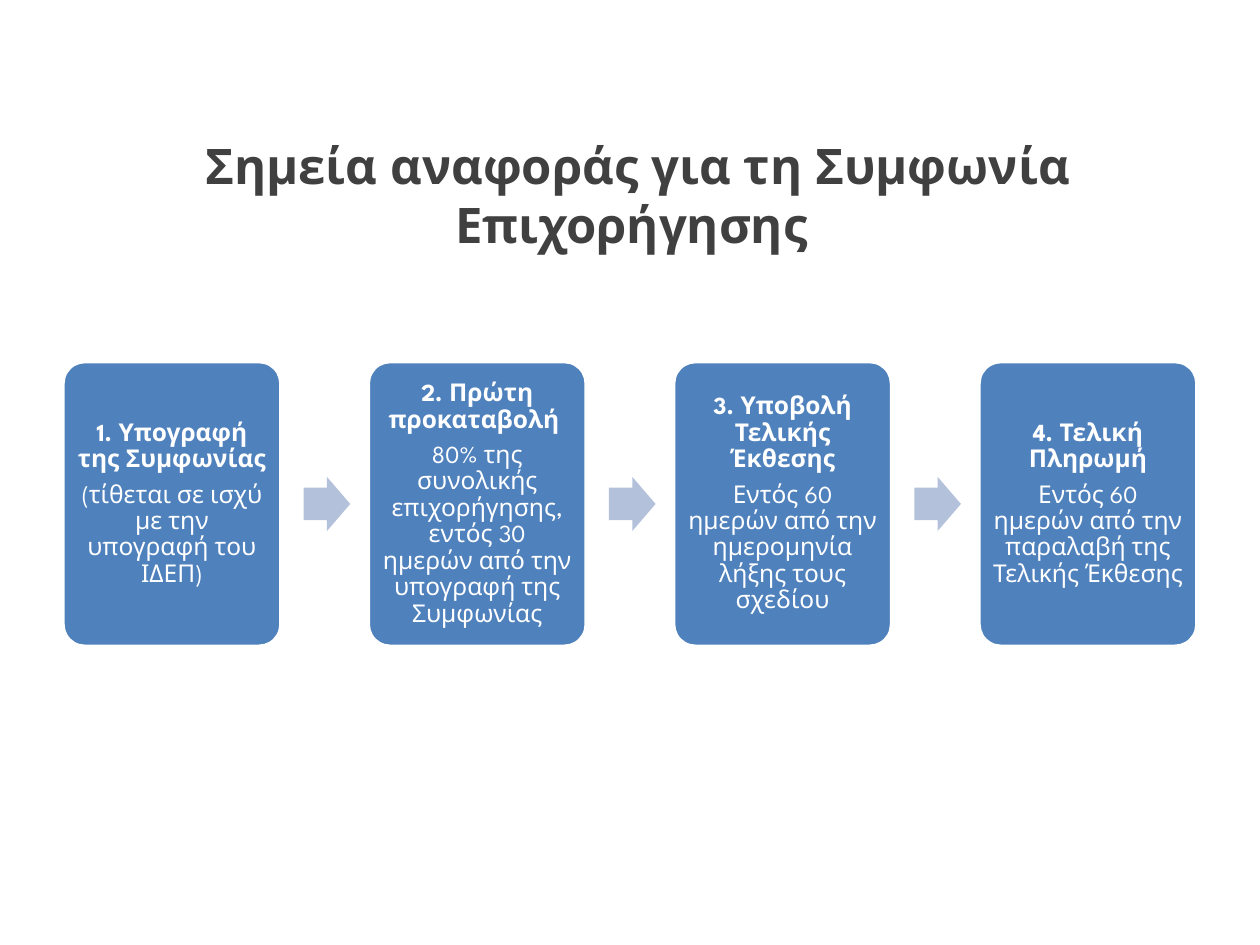
from pptx import Presentation
from pptx.dml.color import RGBColor
from pptx.enum.shapes import MSO_SHAPE
from pptx.enum.text import MSO_ANCHOR, PP_ALIGN
from pptx.util import Inches, Pt

ROUNDED = MSO_SHAPE.ROUNDED_RECTANGLE
RIGHT_ARROW = MSO_SHAPE.RIGHT_ARROW
MIDDLE = MSO_ANCHOR.MIDDLE
CENTER = PP_ALIGN.CENTER

WHITE = RGBColor(0xFF, 0xFF, 0xFF)
DARK_GREY = RGBColor(0x40, 0x40, 0x40)
BLUE = RGBColor(0x4F, 0x81, 0xBD)
PALE_BLUE = RGBColor(0xB3, 0xC1, 0xDB)
FONT = "League Spartan"

TITLE = " Σημεία αναφοράς για τη Συμφωνία Επιχορήγησης"
STEPS = [
    ("1. Υπογραφή της Συμφωνίας",
     "(τίθεται σε ισχύ με την υπογραφή του ΙΔΕΠ)"),
    ("2. Πρώτη προκαταβολή ",
     "80% της συνολικής επιχορήγησης, εντός 30 ημερών από την υπογραφή της Συμφωνίας"),
    ("3. Υποβολή Τελικής Έκθεσης",
     "Εντός 60 ημερών από την ημερομηνία λήξης τους σχεδίου"),
    ("4. Τελική Πληρωμή",
     "Εντός 60 ημερών από την παραλαβή της Τελικής Έκθεσης"),
]

FIRST_LEFT = 0.5
CARD_TOP = 2.87
CARD_WIDTH = 1.73
CARD_HEIGHT = 2.26
PITCH = 2.4233
ARROW_OFFSET = 1.91
ARROW_WIDTH = 0.37
ARROW_HEIGHT = 0.43


def write(paragraph, text, size=14, color=WHITE, bold=False, spacing=None, after=None):
    paragraph.alignment = CENTER
    paragraph.line_spacing = spacing
    paragraph.space_after = after
    run = paragraph.add_run()
    run.text = text
    run.font.name = FONT
    run.font.size = Pt(size)
    run.font.bold = bold
    run.font.color.rgb = color


def add_title(slide):
    title = slide.shapes.add_textbox(Inches(0.51), Inches(0.99), Inches(9), Inches(1.1))
    frame = title.text_frame
    frame.word_wrap = True
    frame.vertical_anchor = MIDDLE
    write(frame.paragraphs[0], TITLE, size=28, color=DARK_GREY, bold=True)


def add_filled(slide, preset, left, top, width, height, fill):
    shape = slide.shapes.add_shape(
        preset, Inches(left), Inches(top), Inches(width), Inches(height))
    shape.shadow.inherit = False
    shape.fill.solid()
    shape.fill.fore_color.rgb = fill
    return shape


def add_step(slide, left, heading, detail):
    card = add_filled(slide, ROUNDED, left, CARD_TOP, CARD_WIDTH, CARD_HEIGHT, BLUE)
    card.adjustments[0] = 0.1
    card.line.color.rgb = WHITE
    card.line.width = Pt(2)
    frame = card.text_frame
    frame.word_wrap = True
    frame.vertical_anchor = MIDDLE
    frame.margin_left = frame.margin_right = Inches(0.06)
    frame.margin_top = frame.margin_bottom = Inches(0.06)
    write(frame.paragraphs[0], heading, bold=True, spacing=0.9, after=Pt(5))
    write(frame.add_paragraph(), detail, spacing=0.9, after=Pt(5))


def add_arrow(slide, left):
    top = CARD_TOP + (CARD_HEIGHT - ARROW_HEIGHT) / 2
    arrow = add_filled(slide, RIGHT_ARROW, left, top, ARROW_WIDTH, ARROW_HEIGHT, PALE_BLUE)
    arrow.adjustments[0] = 0.6
    arrow.adjustments[1] = 0.5
    arrow.line.fill.background()


def main():
    deck = Presentation()
    deck.slide_width = Inches(10)
    deck.slide_height = Inches(7.5)
    slide = deck.slides.add_slide(deck.slide_layouts[6])
    add_title(slide)
    for index, (heading, detail) in enumerate(STEPS):
        left = FIRST_LEFT + index * PITCH
        add_step(slide, left, heading, detail)
        if index < len(STEPS) - 1:
            add_arrow(slide, left + ARROW_OFFSET)
    deck.save("out.pptx")


if __name__ == "__main__":
    main()
